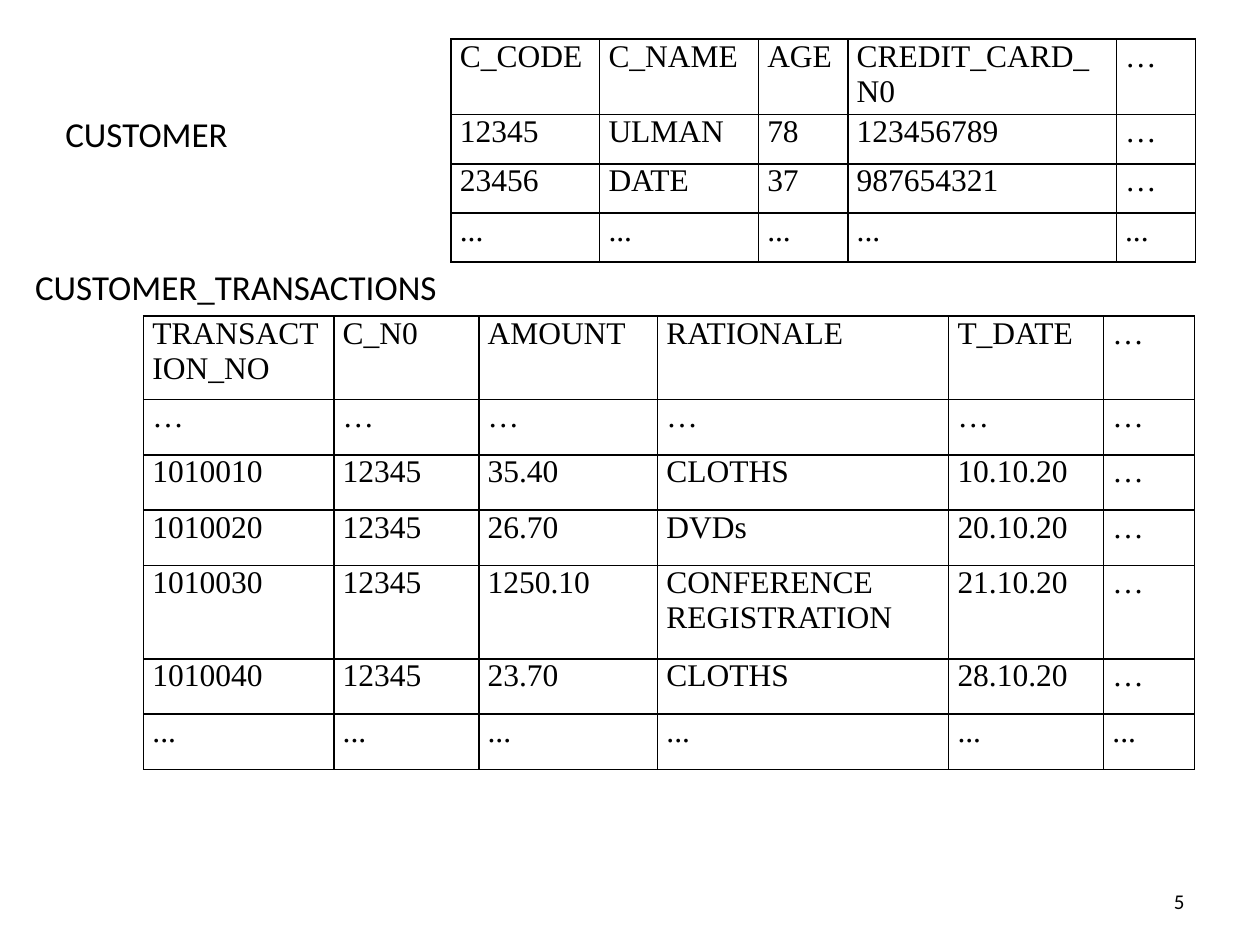
"""Build a slide with a customer table and its transactions table."""
from dataclasses import dataclass

from lxml import etree
from pptx import Presentation
from pptx.dml.color import RGBColor
from pptx.enum import text
from pptx.oxml import ns
from pptx.util import Inches, Pt


@dataclass(frozen=True)
class Theme:
    ink: str = "000000"
    label_font: str = "Calibri"
    cell_font: str = "Times New Roman"
    label_size: int = 20
    cell_size: int = 18
    number_size: int = 12
    border: int = 1


theme = Theme()


def write(tf, content, font, size, align):
    p = tf.paragraphs[0]
    p.alignment = align
    r = p.add_run()
    r.text = content
    for name, value in {"name": font, "size": Pt(size), "bold": False}.items():
        setattr(r.font, name, value)
    r.font.color.rgb = RGBColor.from_string(theme.ink)


def add_borders(cell):
    tc_pr = cell._tc.get_or_add_tcPr()
    for side in "LRTB":
        ln = etree.SubElement(tc_pr, ns.qn(f"a:ln{side}"), w=str(Pt(theme.border)))
        fill = etree.SubElement(ln, ns.qn("a:solidFill"))
        etree.SubElement(fill, ns.qn("a:srgbClr"), val=theme.ink)


prs = Presentation()
prs.slide_width, prs.slide_height = Inches(10), Inches(7.5)
s = prs.slides.add_slide(prs.slide_layouts[6])

left, right = text.PP_ALIGN.LEFT, text.PP_ALIGN.RIGHT
labels = [
    ("5", (7.17, 6.95, 2.33, 0.4), theme.number_size, right),
    ("CUSTOMER", (0.42, 0.84, 1.75, 0.44), theme.label_size, left),
    ("CUSTOMER_TRANSACTIONS", (0.18, 2.05, 3.56, 0.44), theme.label_size, left),
]
for content, box, size, align in labels:
    tf = s.shapes.add_textbox(*map(Inches, box)).text_frame
    tf.word_wrap = align == right
    tf.vertical_anchor = text.MSO_ANCHOR.MIDDLE
    write(tf, content, theme.label_font, size, align)

transactions = [
    ["TRANSACTION_NO", "C_N0", "AMOUNT", "RATIONALE", "T_DATE", "…"],
    ["…"] * 6,
    ["1010010", "12345", "35.40", "CLOTHS", "10.10.20", "…"],
    ["1010020", "12345", "26.70", "DVDs", "20.10.20", "…"],
    ["1010030", "12345", "1250.10", "CONFERENCE REGISTRATION", "21.10.20", "…"],
    ["1010040", "12345", "23.70", "CLOTHS", "28.10.20", "…"],
    ["..."] * 6,
]
customers = [
    ["C_CODE", "C_NAME", "AGE", "CREDIT_CARD_N0", "…"],
    ["12345", "ULMAN", "78", "123456789", "…"],
    ["23456", "DATE", "37", "987654321", "…"],
    ["..."] * 5,
]
tables = [
    (transactions, 1.14, 2.51, [1.51, 1.15, 1.42, 2.31, 1.23, 0.72],
     [0.66, 0.44, 0.44, 0.44, 0.74, 0.44, 0.44]),
    (customers, 3.58, 0.31, [1.18, 1.26, 0.71, 2.13, 0.63],
     [0.6, 0.39, 0.39, 0.39]),
]
cell_format = {
    "margin_left": Inches(0.07),
    "margin_right": Inches(0.07),
    "margin_top": 0,
    "margin_bottom": 0,
    "vertical_anchor": text.MSO_ANCHOR.TOP,
}
for rows, x, y, widths, heights in tables:
    box = map(Inches, (x, y, sum(widths), sum(heights)))
    table = s.shapes.add_table(len(rows), len(widths), *box).table
    table.first_row = table.horz_banding = False
    for column, width in zip(table.columns, widths):
        column.width = Inches(width)
    for row, height, values in zip(table.rows, heights, rows):
        row.height = Inches(height)
        for cell, value in zip(row.cells, values):
            for name, setting in cell_format.items():
                setattr(cell, name, setting)
            add_borders(cell)
            cell.fill.background()
            write(cell.text_frame, value, theme.cell_font, theme.cell_size,
                  text.PP_ALIGN.JUSTIFY)

prs.save("out.pptx")
